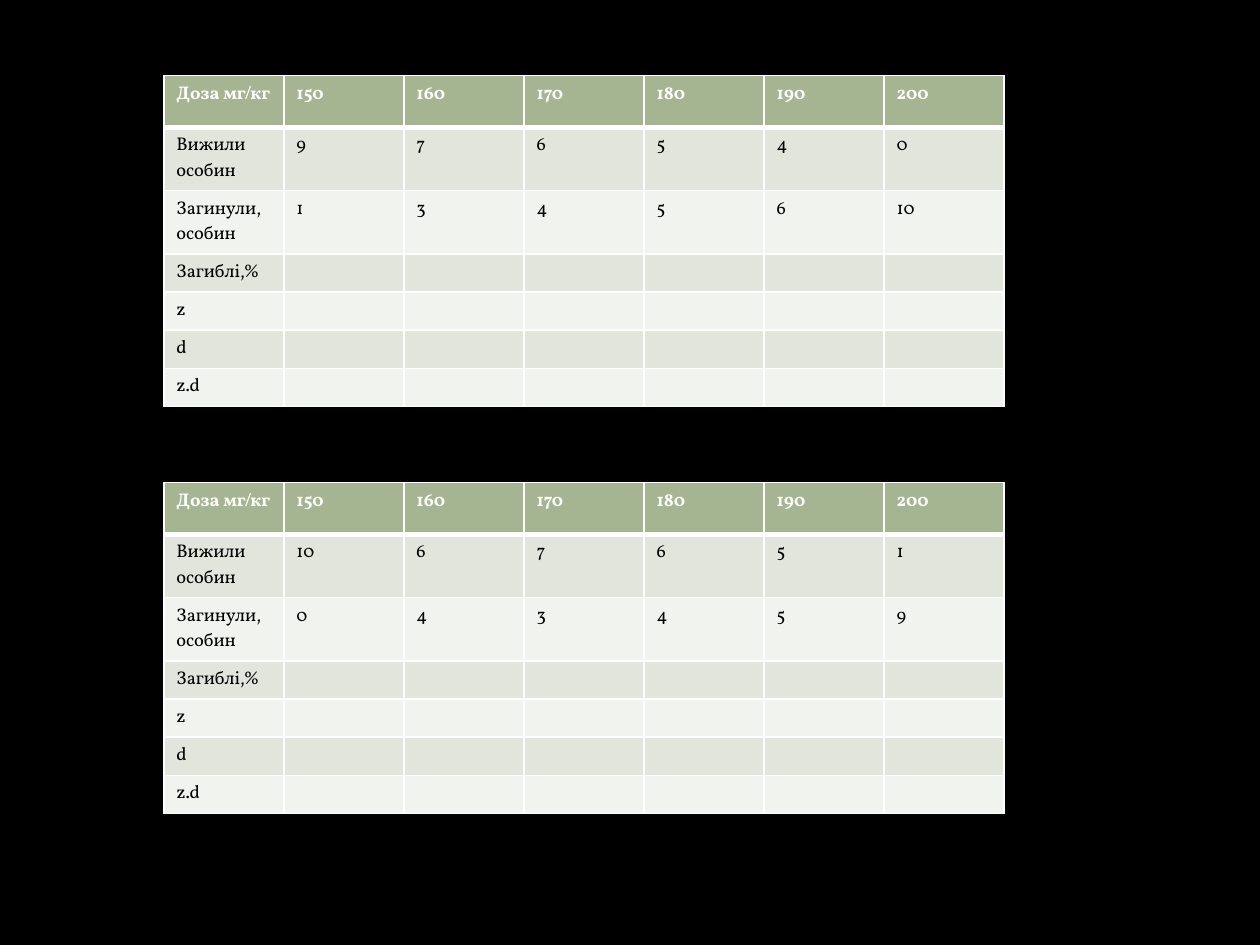
from lxml.etree import SubElement
from pptx import Presentation
from pptx.dml.color import RGBColor
from pptx.oxml.ns import qn
from pptx.util import Inches, Pt

FONT = "Vollkorn"
SIZE = 10.5
WHITE, BLACK = "FFFFFF", "000000"
HEADER_FILL = "A5B592"
BAND_FILLS = ("F0F3EE", "E1E5DC")

ROW_HEIGHTS = (0.41, 0.27, 0.27, 0.23, 0.23, 0.23, 0.23)
TABLE_LEFT, TABLE_WIDTH, TABLE_HEIGHT = 1.3, 6.67, 2.45

DOSES = (150, 160, 170, 180, 190, 200)
ROW_LABELS = ("Доза мг/кг", "Вижили особин", "Загинули, особин",
              "Загиблі,%", "z", "d", "z.d")
# Table top, survivors per dose, deaths per dose
TRIALS = (
    (0.6, (9, 7, 6, 5, 4, 0), (1, 3, 4, 5, 6, 10)),
    (3.83, (10, 6, 7, 6, 5, 1), (0, 4, 3, 4, 5, 9)),
)


def color(value):
    return RGBColor.from_string(value)


def write(cell, text, size=SIZE, bold=False, ink=BLACK):
    para = cell.text_frame.paragraphs[0]
    if not text:
        # Keeps an empty row as low as a row of text
        end = SubElement(para._p, qn("a:endParaRPr"), sz=str(int(size * 100)))
        SubElement(end, qn("a:latin"), typeface=FONT)
        return
    span = para.add_run()
    span.text = text
    span.font.name = FONT
    span.font.size = Pt(size)
    span.font.bold = bold
    span.font.color.rgb = color(ink)


def set_borders(cell, top=1, bottom=1):
    props = cell._tc.get_or_add_tcPr()
    for side, width in (("L", 1), ("R", 1), ("T", top), ("B", bottom)):
        line = SubElement(props, qn(f"a:ln{side}"), w=str(Pt(width)))
        fill = SubElement(line, qn("a:solidFill"))
        SubElement(fill, qn("a:srgbClr"), val=WHITE)


def add_dose_table(page, box, survived, died):
    values = (DOSES, survived, died)
    frame = page.shapes.add_table(len(ROW_LABELS), len(DOSES) + 1,
                                  *map(Inches, box))
    table = frame.table
    for row, height in zip(table.rows, ROW_HEIGHTS):
        row.height = Inches(height)
    frame.height = Inches(box[3])

    for r, label in enumerate(ROW_LABELS):
        numbers = values[r] if r < len(values) else [""] * len(DOSES)
        header = r == 0
        for c, text in enumerate((label, *numbers)):
            cell = table.cell(r, c)
            write(cell, str(text), bold=header, ink=WHITE if header else BLACK)
            set_borders(cell, top=3 if r == 1 else 1, bottom=3 if header else 1)
            cell.fill.solid()
            cell.fill.fore_color.rgb = color(
                HEADER_FILL if header else BAND_FILLS[r % 2])


def main():
    deck = Presentation()
    deck.slide_width, deck.slide_height = Inches(10), Inches(7.5)
    page = deck.slides.add_slide(deck.slide_layouts[6])
    page.background.fill.solid()
    page.background.fill.fore_color.rgb = color(BLACK)
    for top, survived, died in TRIALS:
        box = (TABLE_LEFT, top, TABLE_WIDTH, TABLE_HEIGHT)
        add_dose_table(page, box, survived, died)
    deck.save("out.pptx")


if __name__ == "__main__":
    main()
